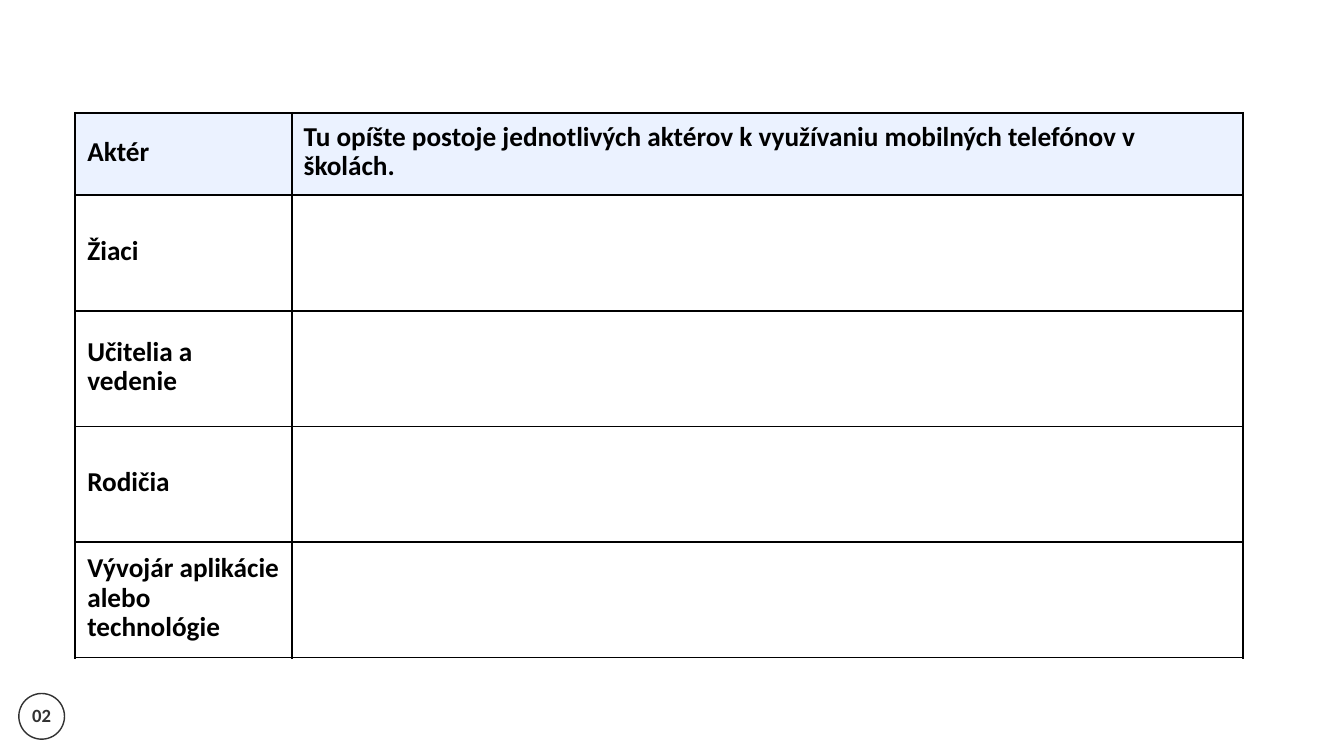
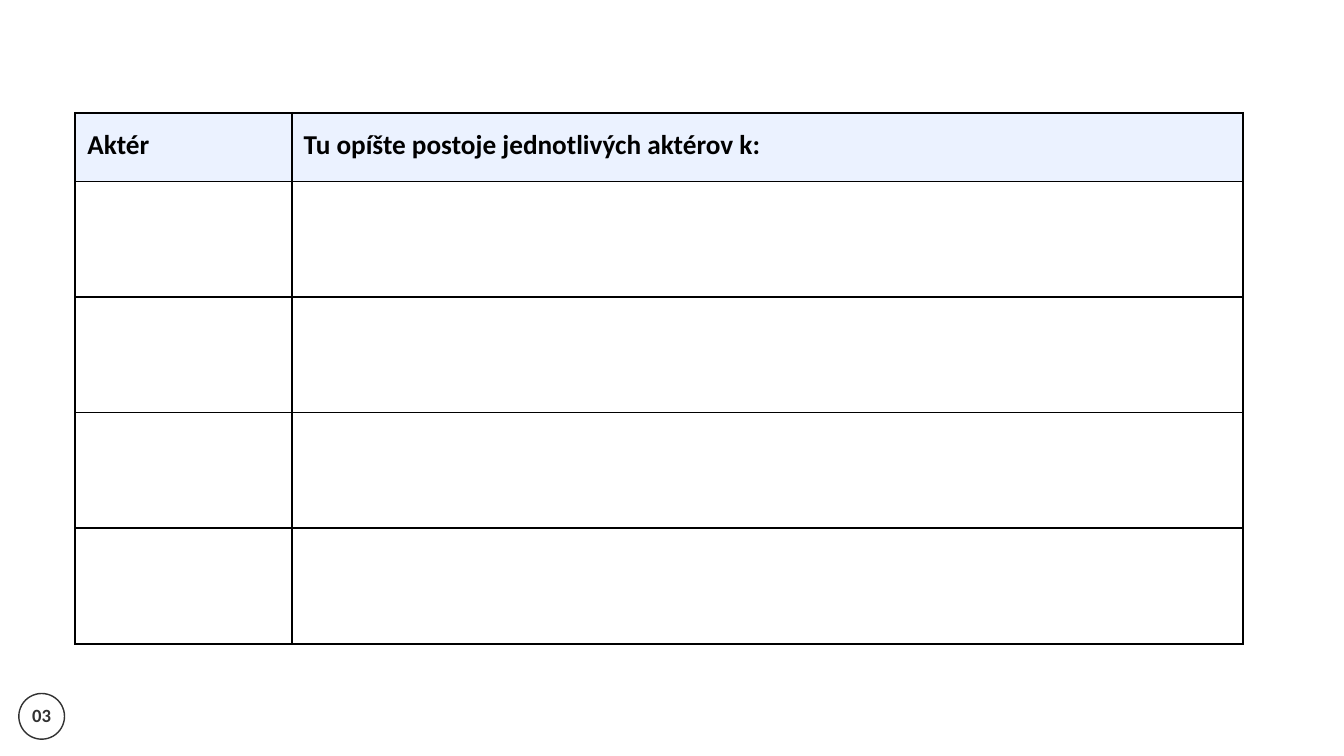
import pptx
import pptx.util
import pptx.oxml
import pptx.oxml.ns
from pptx.dml.color import RGBColor
from pptx.enum.shapes import MSO_SHAPE
from pptx.enum.text import MSO_ANCHOR, PP_ALIGN

PX = 9144  # EMU per px, at 100 px to the inch
FONT = "Calibri"
BLACK = RGBColor(0x00, 0x00, 0x00)
CHARCOAL = RGBColor(0x32, 0x32, 0x32)
WHITE = RGBColor(0xFF, 0xFF, 0xFF)
HEADER_BLUE = RGBColor(0xEB, 0xF2, 0xFF)
BORDER_WIDTH = pptx.util.Pt(2.19)

COLUMN_WIDTHS = [322, 1416]
ROW_HEIGHTS = [102] + [172] * 4
CELL_PADDING = 18

WORKSHEETS = [
    ("02",
     "Tu opíšte postoje jednotlivých aktérov k využívaniu mobilných telefónov v školách.",
     ["Žiaci", "Učitelia a vedenie", "Rodičia", "Vývojár aplikácie alebo technológie"]),
    ("03", "Tu opíšte postoje jednotlivých aktérov k:", [""] * 4),
]


def style_text(paragraph, size, line_spacing, color):
    paragraph.line_spacing = pptx.util.Pt(line_spacing)
    paragraph.font.name = FONT
    paragraph.font.size = pptx.util.Pt(size)
    paragraph.font.bold = True
    paragraph.font.color.rgb = color


def add_borders(cell):
    """Draw all four sides; the lines must precede the fill in the cell XML."""
    properties = cell._tc.get_or_add_tcPr()
    for position, side in enumerate(("lnL", "lnR", "lnT", "lnB")):
        properties.insert(position, pptx.oxml.parse_xml(
            f'<a:{side} {pptx.oxml.ns.nsdecls("a")} w="{BORDER_WIDTH}">'
            f'<a:solidFill><a:srgbClr val="{BLACK}"/></a:solidFill></a:{side}>'))


deck = pptx.Presentation()
deck.slide_width = 2000 * PX
deck.slide_height = 1125 * PX

for number, question, actors in WORKSHEETS:
    slide = deck.slides.add_slide(deck.slide_layouts[6])
    slide.background.fill.solid()
    slide.background.fill.fore_color.rgb = WHITE

    page_badge = slide.shapes.add_shape(
        MSO_SHAPE.OVAL, 28 * PX, 1032 * PX, 68 * PX, 68 * PX)
    page_badge.shadow.inherit = False
    page_badge.fill.solid()
    page_badge.fill.fore_color.rgb = WHITE
    page_badge.line.color.rgb = CHARCOAL
    page_badge.line.width = pptx.util.Pt(1.5)
    badge_text = page_badge.text_frame
    badge_text.margin_left = badge_text.margin_right = 0
    badge_text.margin_top = badge_text.margin_bottom = 0
    badge_text.vertical_anchor = MSO_ANCHOR.MIDDLE
    badge_text.text = number
    badge_text.paragraphs[0].alignment = PP_ALIGN.CENTER
    style_text(badge_text.paragraphs[0], 20, 20.8, CHARCOAL)

    attitudes = slide.shapes.add_table(
        len(ROW_HEIGHTS), len(COLUMN_WIDTHS), 112 * PX, 168 * PX,
        sum(COLUMN_WIDTHS) * PX, sum(ROW_HEIGHTS) * PX).table
    attitudes.first_row = False
    attitudes.horz_banding = False
    for column, width in zip(attitudes.columns, COLUMN_WIDTHS):
        column.width = width * PX
    for row, height in zip(attitudes.rows, ROW_HEIGHTS):
        row.height = height * PX

    entries = [("Aktér", question)] + [(actor, "") for actor in actors]
    for row_index, entry in enumerate(entries):
        for column_index, wording in enumerate(entry):
            cell = attitudes.cell(row_index, column_index)
            cell.margin_left = cell.margin_right = CELL_PADDING * PX
            cell.margin_top = cell.margin_bottom = CELL_PADDING * PX
            cell.vertical_anchor = MSO_ANCHOR.MIDDLE
            if row_index == 0:
                cell.fill.solid()
                cell.fill.fore_color.rgb = HEADER_BLUE
            else:
                cell.fill.background()
            add_borders(cell)
            if wording:
                cell.text = wording
                style_text(cell.text_frame.paragraphs[0], 29.2, 31.2, BLACK)

deck.save("out.pptx")
